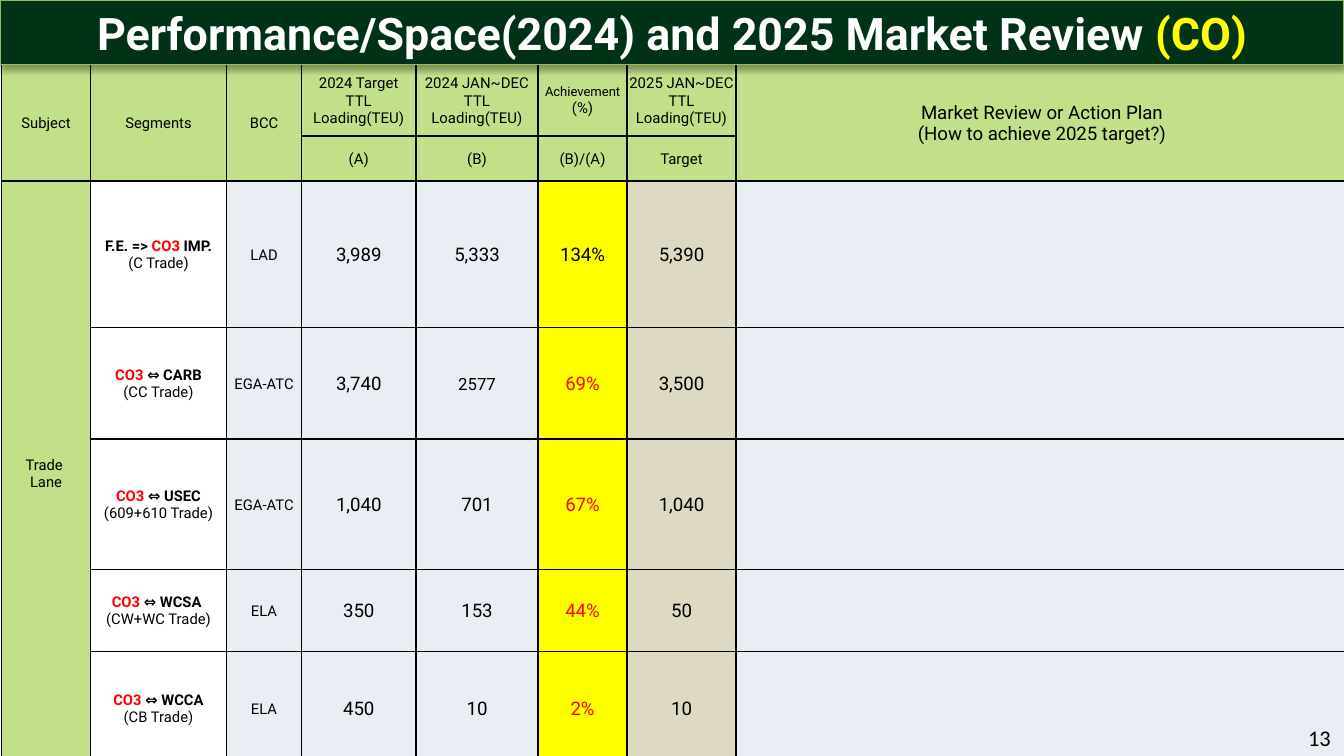
import dataclasses

import lxml.etree
import pptx
import pptx.dml.color
import pptx.enum.shapes
import pptx.enum.text
import pptx.oxml
import pptx.oxml.ns
import pptx.util

Cm = pptx.util.Cm
Pt = pptx.util.Pt
ALIGN = pptx.enum.text.PP_ALIGN
MIDDLE = pptx.enum.text.MSO_ANCHOR.MIDDLE


@dataclasses.dataclass(frozen=True)
class Theme:
    face: str = "Roboto"
    plain: str = "Calibri"
    black: str = "000000"
    white: str = "FFFFFF"
    red: str = "FF0000"
    yellow: str = "FFFF00"
    dark: str = "003217"
    edge: str = "98B955"
    green: str = "C2E088"
    pale: str = "E9EDF4"
    sand: str = "DDD9C3"
    title: float = 24
    page: float = 12
    value: float = 10
    lower: float = 9
    head: float = 8
    label: float = 7.9
    tiny: float = 7


THEME = Theme()
WIDTHS = [1.68, 2.57, 1.42, 2.16, 2.31, 1.68, 2.06, 11.56]
HEIGHTS = [1.35, 0.64, 2.77, 2.11, 2.46, 1.55, 2.16]
LOAD = "TTL Loading(TEU)"
HEADS = [
    (["Subject"], [THEME.label], None),
    (["Segments"], [THEME.label], None),
    (["BCC"], [THEME.label], None),
    (["2024 Target", LOAD], [THEME.head] * 2, "(A)"),
    (["2024 JAN~DEC", LOAD], [THEME.head] * 2, "(B)"),
    (["Achievement", "(%)"], [THEME.tiny, THEME.head], "(B)/(A)"),
    (["2025 JAN~DEC", LOAD], [THEME.head] * 2, "Target"),
    (["Market Review or Action Plan", "(How to achieve 2025 target?)"],
     [THEME.value] * 2, None),
]
LANES = [
    (["F.E. => ", "CO3", " IMP."], "(C Trade)", "LAD",
     ["3,989", "5,333", "134%", "5,390"]),
    (["CO3 ", "⇔ CARB"], "(CC Trade)", "EGA-ATC",
     ["3,740", "2577", "69%", "3,500"]),
    (["CO3 ", "⇔ USEC"], "(609+610 Trade)", "EGA-ATC",
     ["1,040", "701", "67%", "1,040"]),
    (["CO3 ", "⇔ WCSA "], "(CW+WC Trade)", "ELA",
     ["350", "153", "44%", "50"]),
    (["CO3 ", "⇔ WCCA"], "(CB Trade)", "ELA",
     ["450", "10", "2%", "10"]),
]


def tint(code):
    return pptx.dml.color.RGBColor.from_string(code)


def paint(fill, code):
    fill.solid()
    fill.fore_color.rgb = tint(code)


def style(para, size, color=THEME.black, bold=False, face=THEME.face,
          align=ALIGN.CENTER):
    para.alignment = align
    font = para.font
    font.name, font.size, font.bold = face, Pt(size), bold
    if color:
        font.color.rgb = tint(color)


def add_runs(para, parts):
    for text, color in parts:
        run = para.add_run()
        run.text = text
        run.font.color.rgb = tint(color)


def write(cell, lines, sizes, color=THEME.black):
    frame = cell.text_frame
    frame.text = "\n".join(lines)
    for para, size in zip(frame.paragraphs, sizes):
        style(para, size, color)


def border(cell):
    props = cell._tc.get_or_add_tcPr()
    space = pptx.oxml.ns.nsdecls("a")
    for side in "LRTB":
        props.append(pptx.oxml.parse_xml(
            f'<a:ln{side} {space} w="{Pt(1)}"><a:solidFill>'
            f'<a:srgbClr val="{THEME.black}"/></a:solidFill></a:ln{side}>'))


def frame_cell(cell, code):
    cell.margin_left = cell.margin_right = cell.margin_top = Cm(0.03)
    cell.margin_bottom = 0
    cell.vertical_anchor = MIDDLE
    border(cell)
    if code:
        paint(cell.fill, code)
    else:
        cell.fill.background()


def fill_heads(table):
    for col, (lines, sizes, below) in enumerate(HEADS):
        top, low = table.cell(0, col), table.cell(1, col)
        write(top, lines, sizes)
        if below:
            write(low, [below], [THEME.head])
        else:
            top.merge(low)


def fill_lane(table, row, lane):
    name, trade, port, values = lane
    frame = table.cell(row, 1).text_frame
    first, second = frame.paragraphs[0], frame.add_paragraph()
    style(first, THEME.label, None, True)
    add_runs(first, [(part, THEME.red if part.strip() == "CO3"
                      else THEME.black) for part in name])
    second.text = trade
    style(second, THEME.label)
    write(table.cell(row, 2), [port], [THEME.label])
    for col, value in enumerate(values, 3):
        short = value.endswith("%") and int(value[:-1]) < 100
        size = THEME.lower if value == "2577" else THEME.value
        write(table.cell(row, col), [value], [size],
              THEME.red if short else THEME.black)


def add_grid(slide):
    table = slide.shapes.add_table(
        len(HEIGHTS), len(WIDTHS), Cm(0.03), Cm(1.22),
        Cm(sum(WIDTHS)), Cm(sum(HEIGHTS))).table
    table.first_row = table.horz_banding = False
    for column, width in zip(table.columns, WIDTHS):
        column.width = Cm(width)
    for row, height in zip(table.rows, HEIGHTS):
        row.height = Cm(height)
    fills = [THEME.green, None, THEME.pale, THEME.pale, THEME.pale,
             THEME.yellow, THEME.sand, THEME.pale]
    for row in range(len(HEIGHTS)):
        for col, code in enumerate(fills):
            frame_cell(table.cell(row, col), THEME.green if row < 2 else code)
    fill_heads(table)
    side = table.cell(2, 0)
    write(side, ["Trade ", "Lane"], [THEME.label] * 2)
    side.merge(table.cell(len(HEIGHTS) - 1, 0))
    for row, lane in enumerate(LANES, 2):
        fill_lane(table, row, lane)


def add_page(slide):
    box = slide.shapes.add_textbox(Cm(19.48), Cm(13.56), Cm(5.92), Cm(0.76))
    box.text_frame.word_wrap = True
    para = box.text_frame.paragraphs[0]
    para.text = "13"
    style(para, THEME.page, face=THEME.plain, align=ALIGN.RIGHT)


def add_shade(shape):
    shape.shadow.inherit = False
    effects = shape._element.spPr.find(pptx.oxml.ns.qn("a:effectLst"))
    effects.append(pptx.oxml.parse_xml(
        f'<a:outerShdw {pptx.oxml.ns.nsdecls("a")} blurRad="{Pt(3.1)}" '
        f'dist="{Pt(1.8)}" dir="5400000" rotWithShape="0">'
        f'<a:srgbClr val="{THEME.black}"><a:alpha val="35000"/>'
        '</a:srgbClr></a:outerShdw>'))


def add_title(slide):
    bar = slide.shapes.add_shape(
        pptx.enum.shapes.MSO_SHAPE.RECTANGLE, 0, 0, Cm(25.4), Cm(1.22))
    paint(bar.fill, THEME.dark)
    bar.line.color.rgb = tint(THEME.edge)
    bar.line.width = Pt(0.75)
    add_shade(bar)
    bar.text_frame.vertical_anchor = MIDDLE
    para = bar.text_frame.paragraphs[0]
    style(para, THEME.title, None, True)
    add_runs(para, [
        ("Performance/Space(2024) and 2025 Market Review ", THEME.white),
        ("(CO)", THEME.yellow)])


def main():
    deck = pptx.Presentation()
    deck.slide_width, deck.slide_height = Cm(25.4), Cm(14.29)
    slide = deck.slides.add_slide(deck.slide_layouts[6])
    add_grid(slide)
    add_page(slide)
    add_title(slide)
    deck.save("out.pptx")


if __name__ == "__main__":
    main()
